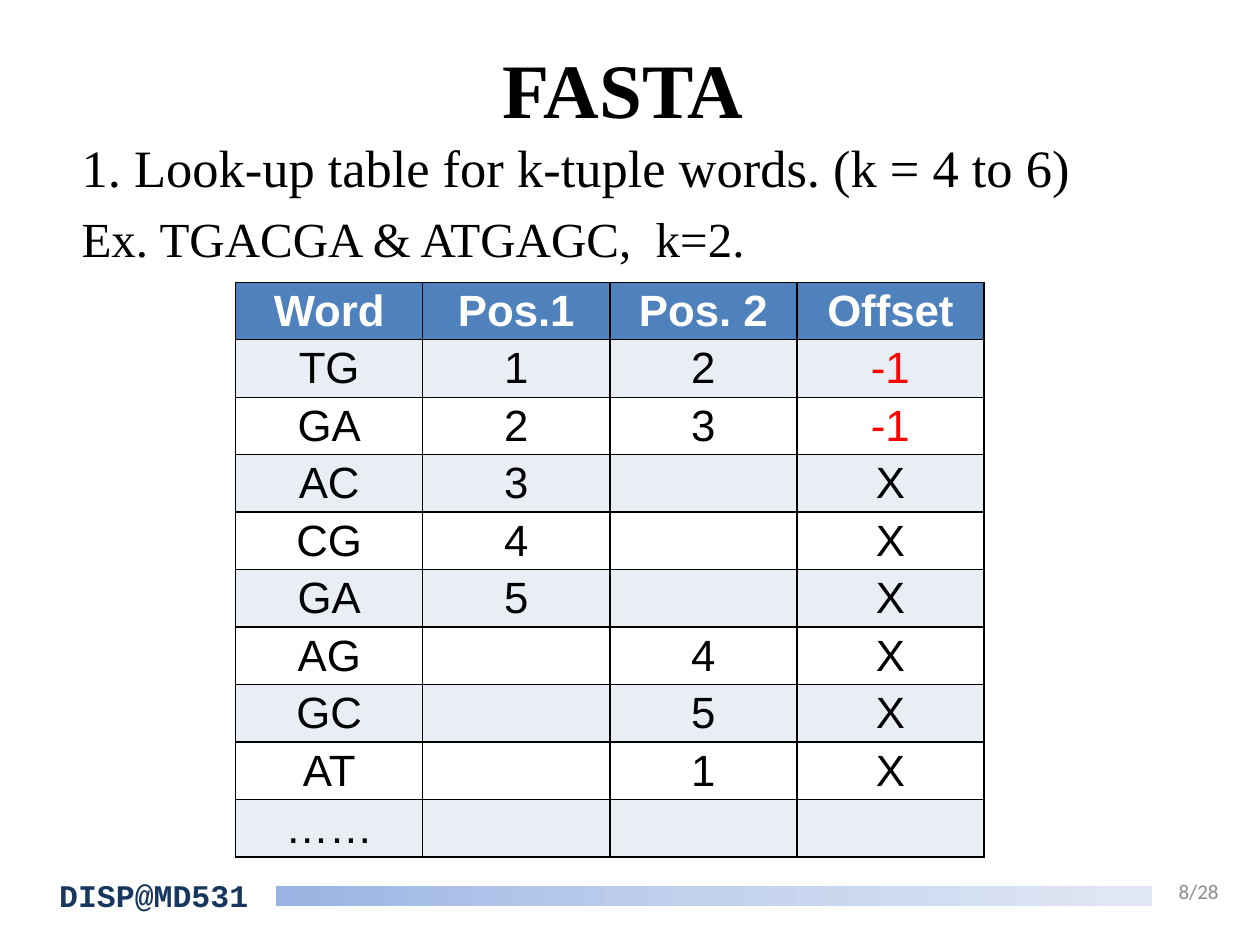
from copy import deepcopy

from pptx import Presentation
from pptx.dml.color import RGBColor
from pptx.enum.shapes import MSO_SHAPE
from pptx.enum.text import MSO_ANCHOR, PP_ALIGN
from pptx.oxml import parse_xml
from pptx.oxml.ns import nsdecls, qn
from pptx.util import Inches, Pt

SERIF = "Times New Roman"
ROWS = [
    ("Word", "Pos.1", "Pos. 2", "Offset"),
    ("TG", "1", "2", "-1"),
    ("GA", "2", "3", "-1"),
    ("AC", "3", "", "X"),
    ("CG", "4", "", "X"),
    ("GA", "5", "", "X"),
    ("AG", "", "4", "X"),
    ("GC", "", "5", "X"),
    ("AT", "", "1", "X"),
    ("……", "", "", ""),
]


def rgb(value):
    return RGBColor.from_string(value)


def write(p, text, size, font, color="000000", bold=False, align=PP_ALIGN.LEFT):
    p.alignment = align
    r = p.add_run()
    r.text = text
    r.font.size = Pt(size)
    r.font.name = font
    r.font.bold = bold
    r.font.color.rgb = rgb(color)


def set_frame(tf, inset=0, top=0, anchor=MSO_ANCHOR.TOP):
    tf.word_wrap = True
    tf.vertical_anchor = anchor
    tf.margin_left = tf.margin_right = Inches(inset)
    tf.margin_top, tf.margin_bottom = Inches(top), 0


def add_box(s, x, y, w, h, **frame):
    tf = s.shapes.add_textbox(Inches(x), Inches(y), Inches(w), Inches(h)).text_frame
    set_frame(tf, **frame)
    return tf


def add_title(s, x, y, w, h):
    sp = s.shapes.title
    sp.left, sp.top, sp.width, sp.height = map(Inches, (x, y, w, h))
    set_frame(sp.text_frame, top=0.1)
    write(sp.text_frame.paragraphs[0], "FASTA", 44, SERIF, bold=True, align=PP_ALIGN.CENTER)


def add_body(s, x, y, w, h):
    tf = add_box(s, x, y, w, h, inset=0.1, top=0.05)
    p = tf.paragraphs[0]
    p.space_after = Pt(6)
    write(p, "1. Look-up table for k-tuple words. (k = 4 to 6)", 30, SERIF)
    write(tf.add_paragraph(), "Ex. TGACGA & ATGAGC,  k=2.", 28, SERIF)


def add_borders(cell):
    tcPr = cell._tc.get_or_add_tcPr()
    for side in ("lnL", "lnR", "lnT", "lnB"):
        tcPr.append(parse_xml(
            f'<a:{side} {nsdecls("a")} w="12700"><a:solidFill>'
            f'<a:srgbClr val="000000"/></a:solidFill></a:{side}>'))


def add_lookup_table(s, x, y, w, h):
    table = s.shapes.add_table(
        len(ROWS), len(ROWS[0]), Inches(x), Inches(y), Inches(w), Inches(h)).table
    for i, row in enumerate(ROWS):
        header = i == 0
        fill = "4F81BD" if header else ("E9EDF4" if i % 2 else "FFFFFF")
        for j, text in enumerate(row):
            cell = table.cell(i, j)
            add_borders(cell)
            cell.fill.solid()
            cell.fill.fore_color.rgb = rgb(fill)
            cell.vertical_anchor = MSO_ANCHOR.MIDDLE
            cell.margin_top = cell.margin_bottom = Inches(0.02)
            if text:
                color = "FFFFFF" if header else ("FF0000" if text == "-1" else "000000")
                write(cell.text_frame.paragraphs[0], text, 25, "Arial", color,
                      bold=header, align=PP_ALIGN.CENTER)


def add_gradient_bar(s, x, y, w, h):
    sp = s.shapes.add_shape(MSO_SHAPE.RECTANGLE, Inches(x), Inches(y), Inches(w), Inches(h))
    sp.shadow.inherit = False
    sp.line.fill.background()
    sp.fill.gradient()
    sp.fill.gradient_angle = 0
    stops = sp._element.spPr.find(qn("a:gradFill")).find(qn("a:gsLst"))
    stops.insert(1, deepcopy(stops[0]))
    colors = ("9AB5E4", "C2D1ED", "E1E8F5")
    for stop, position, color in zip(sp.fill.gradient_stops, (0, 0.5, 1), colors):
        stop.position = position
        stop.color.rgb = rgb(color)


def add_footer(s, x, y, w, h):
    add_gradient_bar(s, x + 1.72, y + 0.15, 6.95, 0.16)
    tf = add_box(s, x, y + 0.07, 1.64, 0.31)
    write(tf.paragraphs[0], "DISP@MD531", 18, "Courier New", "17375E", bold=True)
    tf = add_box(s, x + w - 0.55, y, 0.55, h, inset=0.1, anchor=MSO_ANCHOR.MIDDLE)
    tf.word_wrap = False
    write(tf.paragraphs[0], "8/28", 12, "Calibri", "8C8C8C", align=PP_ALIGN.RIGHT)


def main():
    prs = Presentation()
    prs.slide_width, prs.slide_height = Inches(10), Inches(7.5)
    s = prs.slides.add_slide(prs.slide_layouts[5])
    add_title(s, 0.47, 0.23, 8.95, 1.48)
    add_body(s, 0.55, 1.02, 9.06, 1.14)
    add_footer(s, 0.47, 6.88, 9.3, 0.39)
    add_lookup_table(s, 1.87, 2.24, 5.94, 4.56)
    prs.save("out.pptx")


if __name__ == "__main__":
    main()
